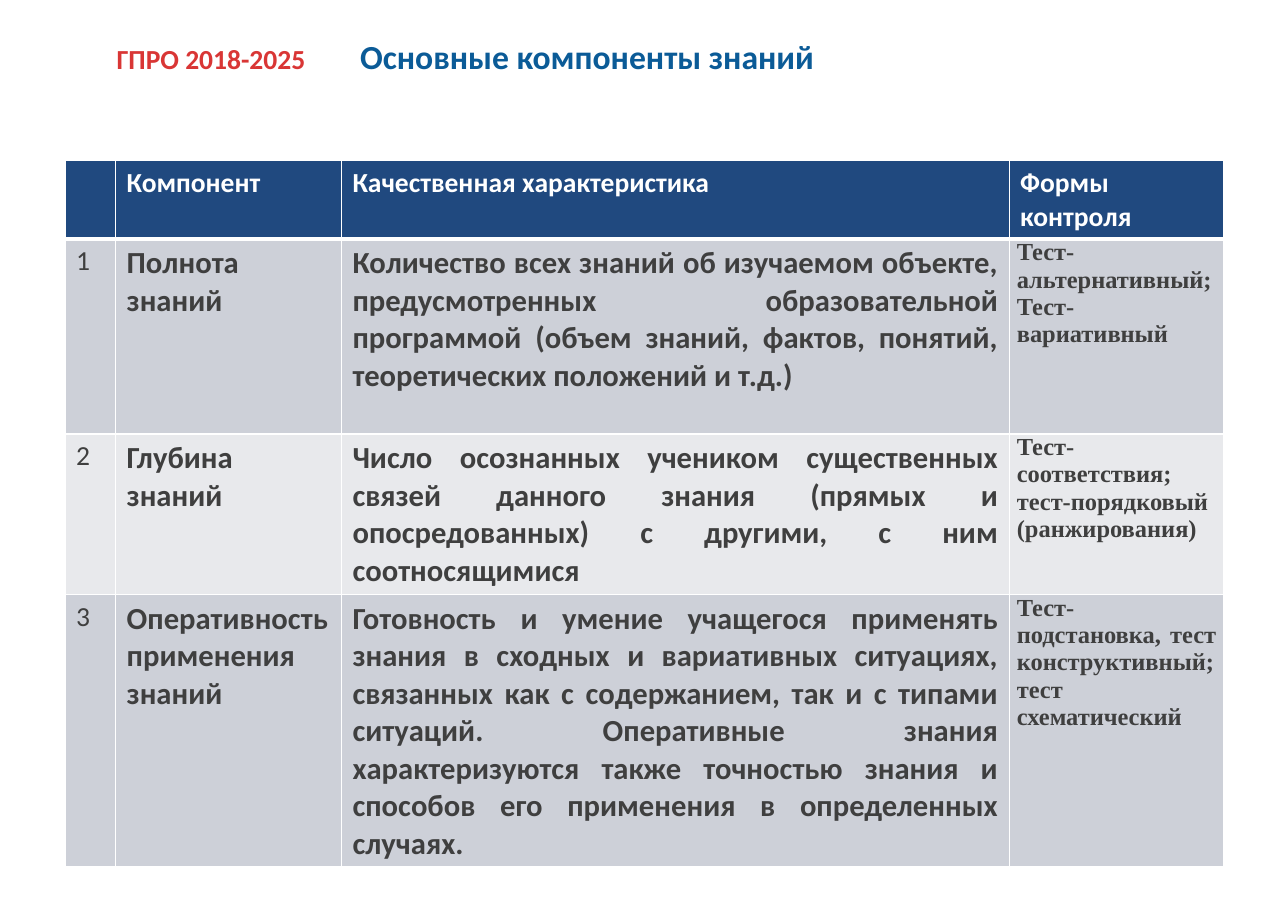
from dataclasses import dataclass

from lxml.etree import SubElement
from pptx import Presentation
from pptx.dml.color import RGBColor
from pptx.enum.text import MSO_ANCHOR, PP_ALIGN
from pptx.oxml.ns import qn
from pptx.util import Inches, Pt


@dataclass(frozen=True)
class Theme:
    sans: str = "Calibri"
    serif: str = "Times New Roman"
    red: str = "D93635"
    blue: str = "0B5B97"
    header: str = "20497F"
    bands: tuple = ("CDD0D8", "E8E9EC")
    text: str = "3F3F3F"
    white: str = "FFFFFF"
    title_size: int = 22
    body_size: int = 20
    label_size: int = 18
    control_size: int = 16


THEME = Theme()
COL_WIDTHS = (0.46, 2.05, 6.06, 1.95)
ROW_HEIGHTS = (0.71, 1.77, 1.46, 2.47)
HEADERS = ("", "Компонент", "Качественная характеристика", "Формы контроля")
COMPONENTS = (
    ("Полнота знаний",
     "Количество всех знаний об изучаемом объекте, предусмотренных "
     "образовательной программой (объем знаний, фактов, понятий, "
     "теоретических положений и т.д.)",
     "Тест-альтернативный;\nТест-вариативный"),
    ("Глубина знаний",
     "Число осознанных учеником существенных связей данного знания "
     "(прямых и опосредованных) с другими, с ним соотносящимися",
     "Тест-соответствия; тест-порядковый (ранжирования)"),
    ("Оперативность применения знаний",
     "Готовность и умение учащегося применять знания в сходных и "
     "вариативных ситуациях, связанных как с содержанием, так и с типами "
     "ситуаций. Оперативные знания характеризуются также точностью знания "
     "и способов его применения в определенных случаях.",
     "Тест-подстановка, тест конструктивный; тест схематический"),
)


def write(tf, text, size, color, font=THEME.sans, bold=True, align=PP_ALIGN.LEFT):
    tf.text = text
    for p in tf.paragraphs:
        p.alignment = align
        p.font.name = font
        p.font.size = Pt(size)
        p.font.bold = bold
        p.font.color.rgb = RGBColor.from_string(color)


def add_text(s, box, text, size, color, wrap=True):
    tf = s.shapes.add_textbox(*map(Inches, box)).text_frame
    tf.word_wrap = wrap
    tf.vertical_anchor = MSO_ANCHOR.MIDDLE
    write(tf, text, size, color)


def set_borders(cell, top=1, bottom=1):
    """Draw white cell edges; must run before the fill is set."""
    tc_pr = cell._tc.get_or_add_tcPr()
    for side, width in (("L", 1), ("R", 1), ("T", top), ("B", bottom)):
        ln = SubElement(tc_pr, qn(f"a:ln{side}"), w=str(Pt(width)))
        fill = SubElement(ln, qn("a:solidFill"))
        SubElement(fill, qn("a:srgbClr"), val=THEME.white)


def fill_cell(cell, color):
    cell.fill.solid()
    cell.fill.fore_color.rgb = RGBColor.from_string(color)


def write_component(cells, number, component):
    name, description, control = component
    write(cells[0].text_frame, str(number), THEME.label_size, THEME.text, bold=False)
    write(cells[1].text_frame, name, THEME.body_size, THEME.text)
    write(cells[2].text_frame, description, THEME.body_size, THEME.text,
          align=PP_ALIGN.JUSTIFY)
    cells[3].margin_left = cells[3].margin_right = Inches(0.07)
    cells[3].margin_top = cells[3].margin_bottom = 0
    write(cells[3].text_frame, control, THEME.control_size, THEME.text,
          font=THEME.serif, align=PP_ALIGN.JUSTIFY)


def add_components_table(s, left, top):
    table = s.shapes.add_table(
        len(ROW_HEIGHTS), len(COL_WIDTHS), Inches(left), Inches(top),
        Inches(sum(COL_WIDTHS)), Inches(sum(ROW_HEIGHTS))).table
    for column, width in zip(table.columns, COL_WIDTHS):
        column.width = Inches(width)
    for i, (row, height) in enumerate(zip(table.rows, ROW_HEIGHTS)):
        row.height = Inches(height)
        for cell in row.cells:
            set_borders(cell, top=3 if i == 1 else 1, bottom=3 if i == 0 else 1)
            fill_cell(cell, THEME.bands[(i - 1) % 2] if i else THEME.header)
    for cell, header in zip(table.rows[0].cells, HEADERS):
        write(cell.text_frame, header, THEME.label_size, THEME.white)
    for number, component in enumerate(COMPONENTS, start=1):
        write_component(list(table.rows[number].cells), number, component)


def main():
    prs = Presentation()
    prs.slide_width, prs.slide_height = Inches(11.69), Inches(8.27)
    s = prs.slides.add_slide(prs.slide_layouts[6])
    add_text(s, (0.96, 0.33, 1.92, 0.4), "ГПРО 2018-2025",
             THEME.label_size, THEME.red, wrap=False)
    add_text(s, (3.17, 0, 8.35, 1.02), "Основные компоненты знаний",
             THEME.title_size, THEME.blue)
    add_components_table(s, 0.59, 1.46)
    prs.save("out.pptx")


if __name__ == "__main__":
    main()
